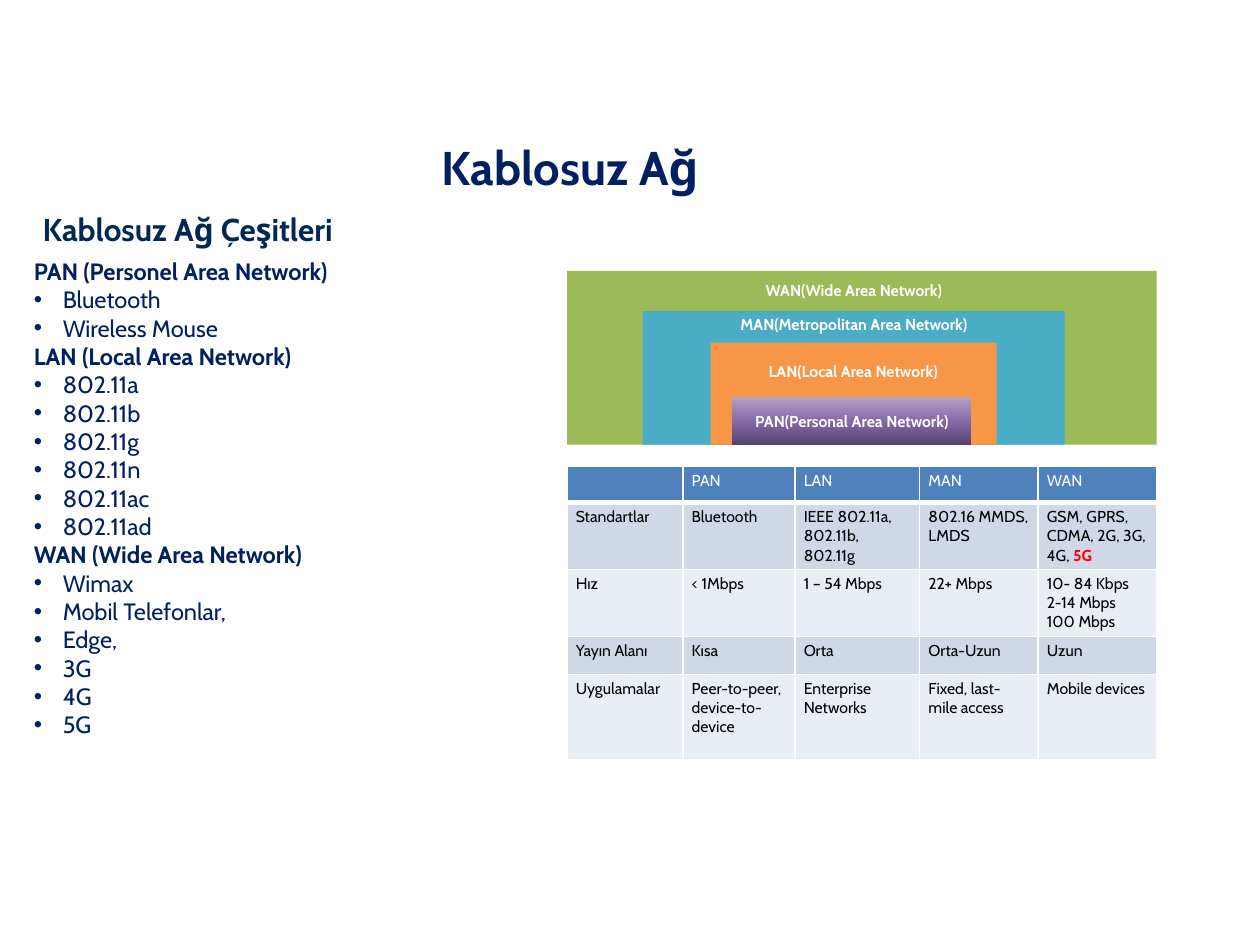
from copy import deepcopy

from lxml.etree import SubElement
from pptx import Presentation
from pptx.dml.color import RGBColor
from pptx.enum.shapes import MSO_SHAPE
from pptx.enum.text import MSO_ANCHOR, PP_ALIGN
from pptx.oxml.ns import qn
from pptx.util import Inches, Pt

COLORS = {
    "navy": "002060", "heading": "002855", "white": "FFFFFF", "black": "000000",
    "red": "FF0000", "header": "4F81BD", "band_dark": "D0D8E8", "band_light": "E9EDF4",
    "wan": "9BBB59", "man": "4BACC6", "lan": "F79646",
}
PAN_GRADIENT = [(0, "56426E"), (0.48, "8469A5"), (1, "B3A2C7")]

NETWORKS = [
    ("PAN (Personel Area Network)", ["Bluetooth", "Wireless Mouse"]),
    ("LAN (Local Area Network)",
     ["802.11a", "802.11b", "802.11g", "802.11n", "802.11ac", "802.11ad"]),
    ("WAN (Wide Area Network)",
     ["Wimax", "Mobil Telefonlar,", "Edge,", "3G", "4G", "5G"]),
]
COMPARISON = [
    ["", "PAN", "LAN", "MAN", "WAN"],
    ["Standartlar", "Bluetooth", "IEEE 802.11a, 802.11b, 802.11g",
     "802.16 MMDS, LMDS", "GSM, GPRS, CDMA, 2G, 3G, 4G, "],
    ["Hız", "< 1Mbps", "1 – 54 Mbps", "22+ Mbps", "10- 84 Kbps\n2-14 Mbps\n100 Mbps"],
    ["Yayın Alanı", "Kısa", "Orta", "Orta-Uzun", "Uzun"],
    ["Uygulamalar", "Peer-to-peer, device-to-device", "Enterprise Networks",
     "Fixed, last-mile access", "Mobile devices"],
]
COLUMN_WIDTHS = [0.92, 0.89, 0.99, 0.94, 0.94]
ROW_HEIGHTS = [0.29, 0.53, 0.53, 0.3, 0.68]
AREAS = [
    ("wan", 4.5, 2.15, 4.68, 1.38),
    ("man", 5.1, 2.47, 3.35, 1.06),
    ("lan", 5.64, 2.72, 2.27, 0.81),
]
AREA_LABELS = [
    ("LAN(Local Area Network)", 5.7, 2.84, 2.14, 0.21),
    ("MAN(Metropolitan Area Network)", 5.37, 2.47, 2.81, 0.21),
    ("WAN(Wide Area Network)", 5.37, 2.2, 2.81, 0.21),
]


class SlideBuilder:
    font_name = "Cabin"

    def __init__(self, presentation):
        self.slide = presentation.slides.add_slide(presentation.slide_layouts[5])

    def style(self, paragraph, size, color, bold=False, align=None):
        if align is not None:
            paragraph.alignment = align
        for run in paragraph.runs:
            run.font.name = self.font_name
            run.font.size = Pt(size)
            run.font.bold = bold
            run.font.color.rgb = RGBColor.from_string(COLORS[color])

    def insets(self, holder, side, end):
        holder.margin_left = holder.margin_right = Inches(side)
        holder.margin_top = holder.margin_bottom = Inches(end)

    def title(self, text, left, top, width, height):
        shape = self.slide.shapes.title
        shape.left, shape.top = Inches(left), Inches(top)
        shape.width, shape.height = Inches(width), Inches(height)
        text_frame = shape.text_frame
        text_frame.text = text
        text_frame.vertical_anchor = MSO_ANCHOR.TOP
        self.style(text_frame.paragraphs[0], 27, "navy", True, PP_ALIGN.CENTER)

    def text_box(self, text, box, size, color, align=None, shapes=None):
        shapes = self.slide.shapes if shapes is None else shapes
        text_frame = shapes.add_textbox(*map(Inches, box)).text_frame
        text_frame.word_wrap = True
        text_frame.text = text
        self.style(text_frame.paragraphs[0], size, color, True, align)
        return text_frame

    def bullet(self, paragraph):
        properties = paragraph._p.get_or_add_pPr()
        properties.set("marL", str(Inches(0.23)))
        properties.set("indent", str(-Inches(0.23)))
        SubElement(properties, qn("a:buFont"), typeface="Arial")
        SubElement(properties, qn("a:buChar"), char="•")

    def network_list(self, networks, box):
        lines = [(name, True) for name, _ in networks[:1]]
        lines += [(item, False) for item in networks[0][1]]
        for name, items in networks[1:]:
            lines += [(name, True)] + [(item, False) for item in items]
        text_frame = self.text_box(lines[0][0], box, 13.5, "navy")
        for text, is_heading in lines[1:]:
            paragraph = text_frame.add_paragraph()
            paragraph.text = text
            if not is_heading:
                self.bullet(paragraph)
            self.style(paragraph, 13.5, "navy", is_heading)

    def rectangle(self, shapes, box, color=None):
        shape = shapes.add_shape(MSO_SHAPE.RECTANGLE, *map(Inches, box))
        shape.shadow.inherit = False
        shape.line.fill.background()
        if color:
            shape.fill.solid()
            shape.fill.fore_color.rgb = RGBColor.from_string(COLORS[color])
        return shape

    def gradient(self, shape, stops):
        shape.fill.gradient()
        shape.fill.gradient_angle = 90
        stop_list = shape._element.spPr.find(".//" + qn("a:gsLst"))
        stop_list.append(deepcopy(stop_list[0]))
        for stop, (position, color) in zip(shape.fill.gradient_stops, stops):
            stop.position = position
            stop.color.rgb = RGBColor.from_string(color)

    def area_diagram(self):
        shapes = self.slide.shapes.add_group_shape().shapes
        for color, *box in AREAS:
            self.rectangle(shapes, box, color)
        pan = self.rectangle(shapes, (5.81, 3.15, 1.9, 0.38))
        self.gradient(pan, PAN_GRADIENT)
        text_frame = pan.text_frame
        text_frame.text = "PAN(Personal Area Network)"
        text_frame.word_wrap = False
        text_frame.vertical_anchor = MSO_ANCHOR.MIDDLE
        self.insets(text_frame, 0.06, 0.03)
        self.style(text_frame.paragraphs[0], 9, "white", True, PP_ALIGN.CENTER)
        for text, *box in AREA_LABELS:
            label = self.text_box(text, box, 9, "white", PP_ALIGN.CENTER, shapes)
            self.insets(label, 0.06, 0.03)

    def borders(self, cell, is_header):
        properties = cell._tc.get_or_add_tcPr()
        for side in "LRTB":
            width = Pt(3 if is_header and side == "B" else 1)
            line = SubElement(properties, qn(f"a:ln{side}"), w=str(width))
            fill = SubElement(line, qn("a:solidFill"))
            SubElement(fill, qn("a:srgbClr"), val=COLORS["white"])

    def cell(self, cell, text, row):
        cell.text = text
        self.insets(cell, 0.07, 0.04)
        self.borders(cell, row == 0)
        fill = "header" if row == 0 else ("band_dark" if row % 2 else "band_light")
        cell.fill.solid()
        cell.fill.fore_color.rgb = RGBColor.from_string(COLORS[fill])
        for paragraph in cell.text_frame.paragraphs:
            self.style(paragraph, 9, "black" if row else "white")
            if not text:
                SubElement(paragraph._p, qn("a:endParaRPr"), sz="900")

    def table(self, rows, box):
        table = self.slide.shapes.add_table(
            len(rows), len(rows[0]), *map(Inches, box)).table
        for column, width in zip(table.columns, COLUMN_WIDTHS):
            column.width = Inches(width)
        for row, height in zip(table.rows, ROW_HEIGHTS):
            row.height = Inches(height)
        for row_index, row in enumerate(rows):
            for column_index, text in enumerate(row):
                self.cell(table.cell(row_index, column_index), text, row_index)
        return table

    def highlight(self, cell, text):
        run = cell.text_frame.paragraphs[0].add_run()
        run.text = text
        run.font.name = self.font_name
        run.font.size = Pt(9)
        run.font.bold = True
        run.font.color.rgb = RGBColor.from_string(COLORS["red"])


def main():
    presentation = Presentation()
    presentation.slide_width, presentation.slide_height = Inches(10), Inches(7.5)
    builder = SlideBuilder(presentation)
    builder.title("Kablosuz Ağ", 0.17, 1.05, 8.71, 0.56)
    builder.text_box("Kablosuz Ağ Çeşitleri", (0.24, 1.62, 4.76, 0.4), 18, "heading")
    builder.network_list(NETWORKS, (0.17, 1.99, 4.57, 4.19))
    table = builder.table(COMPARISON, (4.5, 3.7, 4.68, sum(ROW_HEIGHTS)))
    builder.highlight(table.cell(1, 4), "5G")
    builder.area_diagram()
    presentation.save("out.pptx")


if __name__ == "__main__":
    main()
